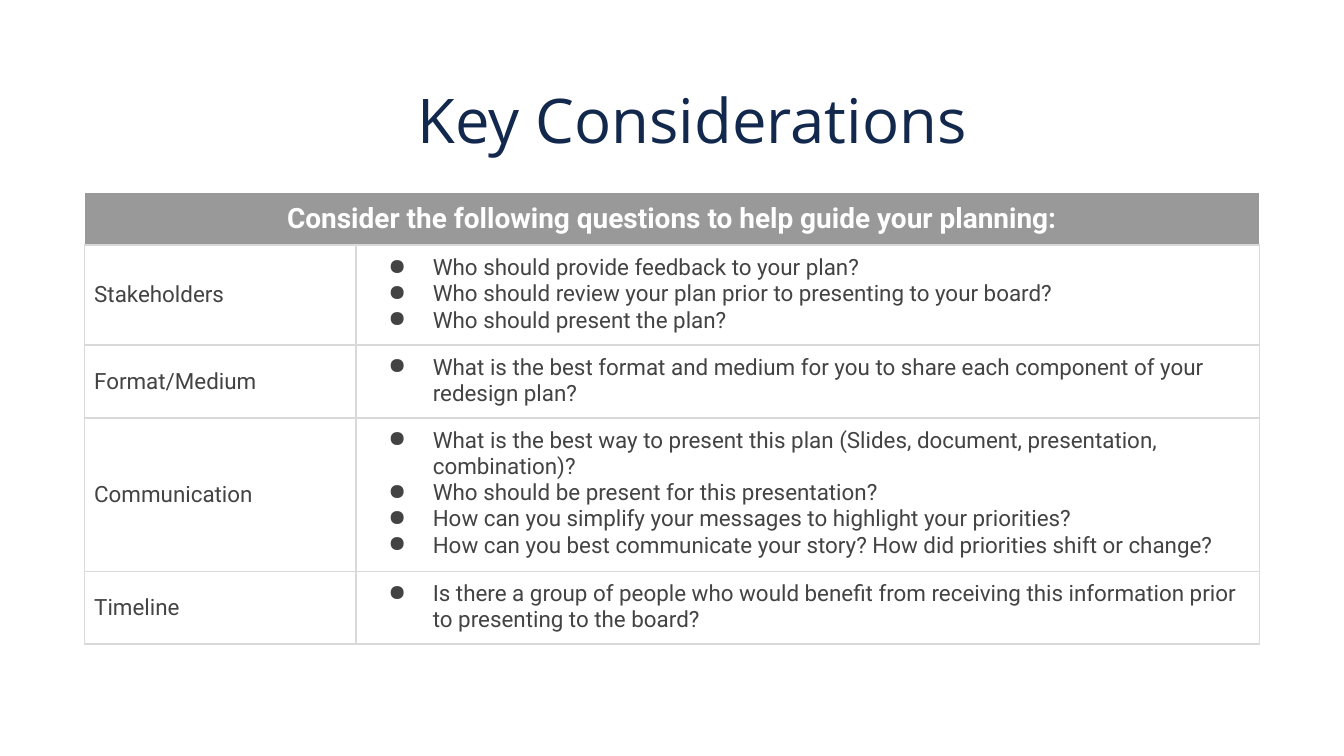
from lxml import etree
from pptx import Presentation
from pptx import util as u
from pptx.dml.color import RGBColor
from pptx.enum import text
from pptx.oxml import ns

NAVY = RGBColor(0x12, 0x28, 0x4C)
WHITE = RGBColor(0xFF, 0xFF, 0xFF)
HEADER_GRAY = RGBColor(0x99, 0x99, 0x99)
BORDER_GRAY = RGBColor(0xD9, 0xD9, 0xD9)
TEXT_GRAY = RGBColor(0x43, 0x43, 0x43)

TITLE_FONT = {"name": "Open Sans", "size": u.Pt(33), "bold": False}
HEADER_FONT = {"name": "Roboto", "size": u.Pt(15), "bold": True}
BODY_FONT = {"name": "Roboto", "size": u.Pt(12), "bold": False}
CELL_MARGINS = {
    f"margin_{side}": u.Cm(0.18) for side in ("left", "right", "top", "bottom")
}
HEADER_BORDERS = {"L": WHITE, "R": WHITE, "T": WHITE, "B": BORDER_GRAY}
BODY_BORDERS = dict.fromkeys("LRTB", BORDER_GRAY)

HEADER = "Consider the following questions to help guide your planning:"
TOPICS = [
    ("Stakeholders", 1.85, [
        "Who should provide feedback to your plan?",
        "Who should review your plan prior to presenting to your board?",
        "Who should present the plan?",
    ]),
    ("Format/Medium", 1.34, [
        "What is the best format and medium for you to share each component "
        "of your redesign plan?",
    ]),
    ("Communication", 2.83, [
        "What is the best way to present this plan (Slides, document, "
        "presentation, combination)?",
        "Who should be present for this presentation?",
        "How can you simplify your messages to highlight your priorities?",
        "How can you best communicate your story? How did priorities shift or change?",
    ]),
    ("Timeline", 1.34, [
        "Is there a group of people who would benefit from receiving this "
        "information prior to presenting to the board?",
    ]),
]


def apply(target, values):
    for name, value in values.items():
        setattr(target, name, value)


def style_font(paragraph, values, color):
    for run in paragraph.runs:
        apply(run.font, values)
        run.font.color.rgb = color


def add_element(parent, tag, **attributes):
    return etree.SubElement(parent, ns.qn(tag), attributes)


def add_bullet(paragraph):
    properties = paragraph._p.get_or_add_pPr()
    properties.set("marL", str(u.Cm(1.27)))
    properties.set("indent", str(-u.Cm(0.84)))
    color = add_element(properties, "a:buClr")
    add_element(color, "a:srgbClr", val=str(TEXT_GRAY))
    add_element(properties, "a:buChar", char="●")


def style_cell(cell, borders, fill=None):
    apply(cell, CELL_MARGINS)
    properties = cell._tc.get_or_add_tcPr()
    for side, color in borders.items():
        line = add_element(properties, f"a:ln{side}", w=str(u.Pt(1)))
        solid = add_element(line, "a:solidFill")
        add_element(solid, "a:srgbClr", val=str(color))
    if fill is None:
        cell.fill.background()
    else:
        cell.fill.solid()
        cell.fill.fore_color.rgb = fill


def add_title(slide, left, top, width, height):
    frame = slide.shapes.add_textbox(left, top, width, height).text_frame
    apply(frame, {
        "word_wrap": True,
        "vertical_anchor": text.MSO_ANCHOR.BOTTOM,
        "margin_left": u.Cm(1.02),
        "margin_right": u.Cm(0.25),
        "margin_top": u.Cm(0.25),
        "margin_bottom": 0,
    })
    paragraph = frame.paragraphs[0]
    paragraph.text = "Key Considerations"
    apply(paragraph, {"alignment": text.PP_ALIGN.CENTER, "line_spacing": 0.9})
    style_font(paragraph, TITLE_FONT, NAVY)


def add_questions_table(slide, left, top, width, height):
    shape = slide.shapes.add_table(len(TOPICS) + 1, 2, left, top, width, height)
    table = shape.table
    apply(table, {"first_row": False, "horz_banding": False})
    topic_width = u.Cm(5.13)
    table.columns[0].width = topic_width
    table.columns[1].width = width - topic_width

    table.rows[0].height = u.Cm(0.95)
    header = table.cell(0, 0)
    header.merge(table.cell(0, 1))
    for column in range(2):
        style_cell(table.cell(0, column), HEADER_BORDERS, HEADER_GRAY)
    header.text = HEADER
    paragraph = header.text_frame.paragraphs[0]
    paragraph.alignment = text.PP_ALIGN.CENTER
    style_font(paragraph, HEADER_FONT, WHITE)

    for row, (topic, row_height, questions) in enumerate(TOPICS, start=1):
        table.rows[row].height = u.Cm(row_height)
        topic_cell, question_cell = table.cell(row, 0), table.cell(row, 1)
        topic_cell.text = topic
        topic_cell.vertical_anchor = text.MSO_ANCHOR.MIDDLE
        question_cell.text = "\n".join(questions)
        for paragraph in question_cell.text_frame.paragraphs:
            add_bullet(paragraph)
        for cell in (topic_cell, question_cell):
            style_cell(cell, BODY_BORDERS)
            for paragraph in cell.text_frame.paragraphs:
                style_font(paragraph, BODY_FONT, TEXT_GRAY)


def main():
    presentation = Presentation()
    presentation.slide_width = u.Cm(25.4)
    presentation.slide_height = u.Cm(14.29)
    slide = presentation.slides.add_slide(presentation.slide_layouts[6])
    add_title(slide, u.Cm(1.8), u.Cm(1.09), u.Cm(21.8), u.Cm(1.88))
    add_questions_table(slide, u.Cm(1.6), u.Cm(3.64), u.Cm(22.2), u.Cm(8.31))
    presentation.save("out.pptx")


if __name__ == "__main__":
    main()
